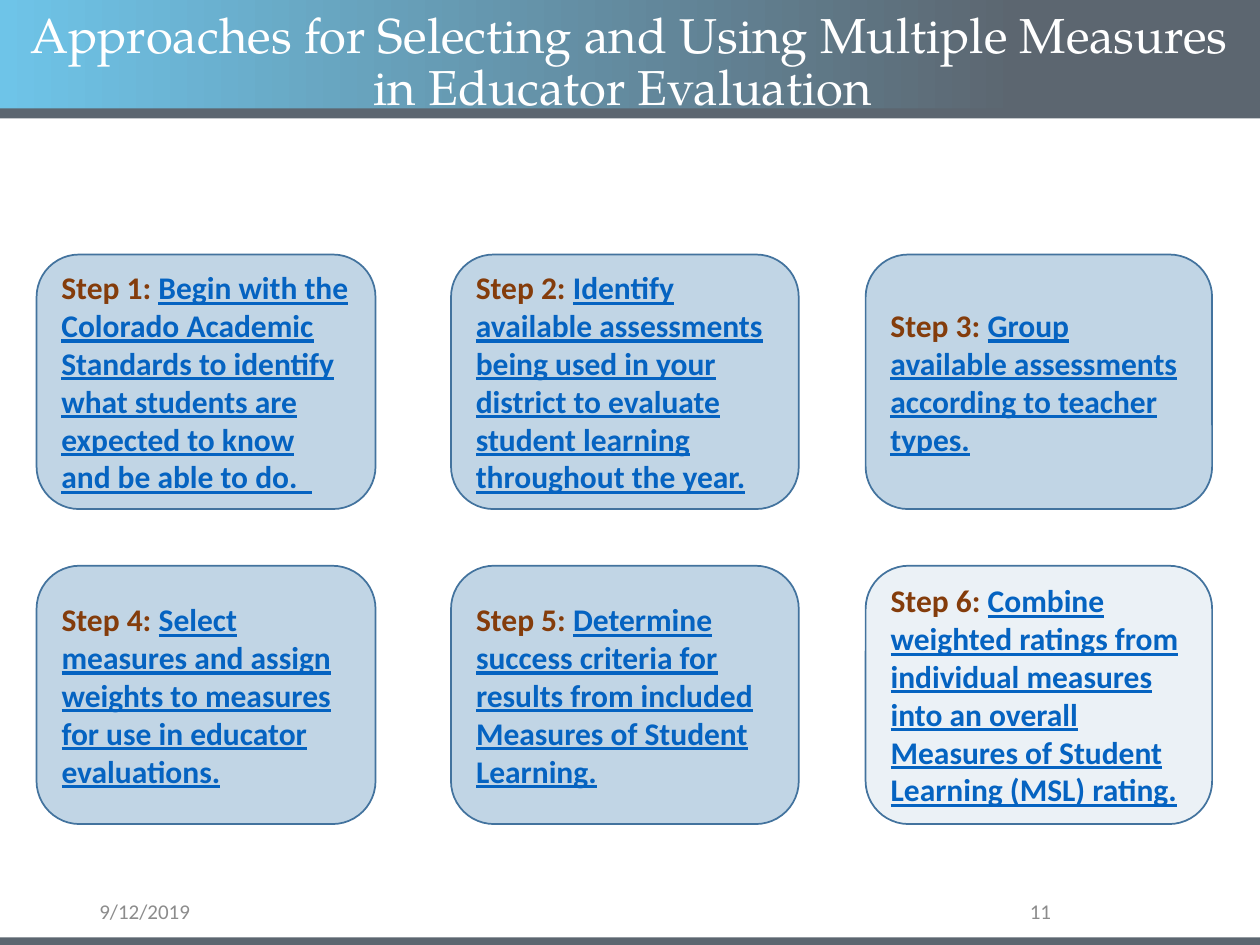
import pptx
import pptx.util
import pptx.dml.color
import pptx.enum.shapes
import pptx.enum.text
import pptx.oxml.ns
import lxml.etree
from dataclasses import dataclass


@dataclass(frozen=True)
class Theme:
    sky: str = "6EC4E8"
    slate: str = "5C6670"
    card: str = "C1D5E5"
    outline: str = "43739E"
    step: str = "843C0B"
    link: str = "0563C1"
    footer: str = "8C8C8C"
    white: str = "FFFFFF"
    title_font: str = "TeX Gyre Pagella"
    body_font: str = "Calibri"
    title_size: int = 28
    card_size: int = 18
    footer_size: int = 12


theme = Theme()
rgb = pptx.dml.color.RGBColor.from_string
inches = pptx.util.Inches
Shape = pptx.enum.shapes.MSO_SHAPE
Align = pptx.enum.text.PP_ALIGN
middle = pptx.enum.text.MSO_ANCHOR.MIDDLE

deck = pptx.Presentation()
deck.slide_width, deck.slide_height = inches(10), inches(7.5)
page = deck.slides.add_slide(deck.slide_layouts[5])


def add_panel(kind, left, top, width, height, color):
    panel = page.shapes.add_shape(
        kind, inches(left), inches(top), inches(width), inches(height))
    panel.shadow.inherit = False
    panel.fill.solid()
    panel.fill.fore_color.rgb = rgb(color)
    panel.line.fill.background()
    return panel


def style(font, name, size, color):
    font.name = name
    font.size = pptx.util.Pt(size)
    font.color.rgb = rgb(color)


# Header and footer bands
header = add_panel(Shape.RECTANGLE, 0, 0, 10, 0.87, theme.sky)
header.fill.gradient()
header.fill.gradient_angle = 0
stops = [(0, theme.sky), (0.81, theme.slate)]
for stop, (position, color) in zip(header.fill.gradient_stops, stops):
    stop.position = position
    stop.color.rgb = rgb(color)
for band_top in (0.86, 7.44):
    add_panel(Shape.RECTANGLE, 0, band_top, 10, 0.08, theme.slate)

# Date and page number
for text, left, width, align in [("9/12/2019", 0.69, 2.25, Align.LEFT),
                                 ("11", 7.06, 1.38, Align.RIGHT)]:
    box = page.shapes.add_textbox(
        inches(left), inches(7.12), inches(width), inches(0.23))
    box.text_frame.word_wrap = True
    box.text_frame.vertical_anchor = middle
    para = box.text_frame.paragraphs[0]
    para.text = text
    para.alignment = align
    style(para.runs[0].font, theme.body_font, theme.footer_size, theme.footer)

# Title, brought in front of the header band
title = page.shapes.title
title.element.getparent().append(title.element)
title.left, title.top = inches(0.12), inches(-0.07)
title.width, title.height = inches(9.74), inches(1.15)
title.text_frame.text = ("Approaches for Selecting and Using Multiple Measures "
                         "in Educator Evaluation ")
title.text_frame.auto_size = pptx.enum.text.MSO_AUTO_SIZE.NONE
title.text_frame.vertical_anchor = middle
para = title.text_frame.paragraphs[0]
para.alignment = Align.CENTER
para.line_spacing = 0.9
style(para.runs[0].font, theme.title_font, theme.title_size, theme.white)

# Step cards, three to a row
steps = [
    "Begin with the Colorado Academic Standards to identify what students are "
    "expected to know and be able to do.  ",
    "Identify available assessments being used in your district to evaluate "
    "student learning throughout the year.",
    "Group available assessments according to teacher types.",
    "Select measures and assign weights to measures for use in educator "
    "evaluations.",
    "Determine success criteria for results from included Measures of Student "
    "Learning.",
    "Combine weighted ratings from individual measures into an overall "
    "Measures of Student Learning (MSL) rating.",
]
column_widths = [2.69, 2.76, 2.75]
rows = [(2.02, 2.02), (4.49, 2.05)]
for index, step in enumerate(steps):
    row, column = divmod(index, len(column_widths))
    top, height = rows[row]
    card = add_panel(Shape.ROUNDED_RECTANGLE, 0.29 + 3.29 * column, top,
                     column_widths[column], height, theme.card)
    card.line.color.rgb = rgb(theme.outline)
    card.line.width = pptx.util.Pt(1)
    card.text_frame.word_wrap = True
    card.text_frame.vertical_anchor = middle
    para = card.text_frame.paragraphs[0]
    para.alignment = Align.LEFT
    for text, color in [(f"Step {index + 1}: ", theme.step), (step, theme.link)]:
        span = para.add_run()
        span.text = text
        style(span.font, theme.body_font, theme.card_size, color)
        span.font.bold = True
    span.font.underline = True

# The last card is mostly see-through
qn = pptx.oxml.ns.qn
card_color = card.element.spPr.find(qn("a:solidFill")).find(qn("a:srgbClr"))
lxml.etree.SubElement(card_color, qn("a:alpha")).set("val", "32000")

deck.save("out.pptx")
